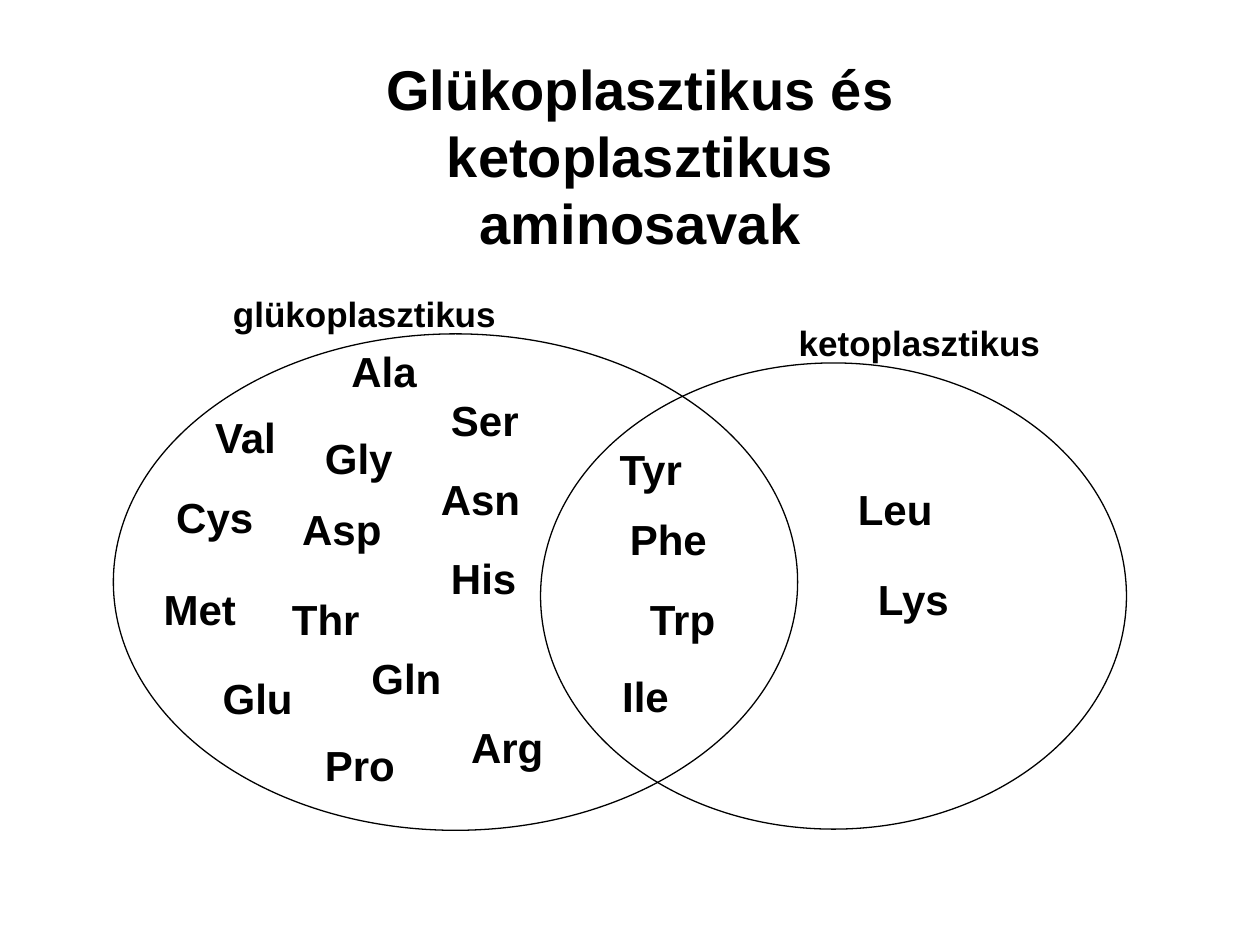
from typing import NamedTuple

from pptx import Presentation
from pptx.dml.color import RGBColor
from pptx.enum.shapes import MSO_SHAPE
from pptx.enum.text import MSO_ANCHOR, MSO_AUTO_SIZE, PP_ALIGN
from pptx.util import Pt

BLACK = RGBColor(0, 0, 0)
FONT = "Arial"
LINE_FACTOR = 1.2
TOP_INSET = 5
TITLE_SIDE_INSET = 20


class Label(NamedTuple):
    text: str
    left: float
    top: float
    width: float
    height: float = 36
    size: int = 24


class Oval(NamedTuple):
    left: float
    top: float
    width: float
    height: float


TITLE = Label("Glükoplasztikus és ketoplasztikus\naminosavak",
              99.4, 25.9, 532.8, 84.2, 32)

SETS = [
    Oval(64.8, 190.8, 391, 283.7),
    Oval(308.9, 207.4, 334.8, 266.4),
]

SET_NAMES = [
    Label("glükoplasztikus", 126, 162, 164.2, 31, 20),
    Label("ketoplasztikus", 449.3, 178.6, 151.9, 31, 20),
]

GLUCOGENIC = [
    Label("Ala", 193.7, 192.2, 51.8),
    Label("Ser", 250.6, 220.3, 53.3),
    Label("Val", 115.9, 230.4, 50.4),
    Label("Gly", 178.6, 241.9, 53.3),
    Label("Asn", 244.8, 265.7, 59.8),
    Label("Cys", 93.6, 275.8, 58.3),
    Label("Asp", 165.6, 283, 59.8),
    Label("His", 250.6, 311, 51.8),
    Label("Met", 86.4, 328.3, 56.2),
    Label("Thr", 159.8, 334.1, 53.3),
    Label("Gln", 205.2, 367.9, 54.7),
    Label("Glu", 120.2, 379.4, 54.7),
    Label("Arg", 262.1, 407.5, 56.2),
    Label("Pro", 178.6, 417.6, 54.7),
]

MIXED = [
    Label("Tyr", 347, 248.4, 51.8),
    Label("Phe", 352.8, 288.7, 58.3),
    Label("Trp", 364.3, 334.1, 53.3),
    Label("Ile", 348.5, 378, 41),
]

KETOGENIC = [
    Label("Leu", 483.1, 271.4, 56.9),
    Label("Lys", 494.6, 322.6, 56.2),
]


def write_text(frame, text: str, *, size: int, align=PP_ALIGN.LEFT,
               wrap: bool = False) -> None:
    frame.text = text
    frame.auto_size = MSO_AUTO_SIZE.NONE
    frame.word_wrap = wrap
    frame.vertical_anchor = MSO_ANCHOR.TOP
    frame.margin_top = Pt(TOP_INSET)
    for para in frame.paragraphs:
        para.alignment = align
        para.line_spacing = Pt(size * LINE_FACTOR)
        para.space_before = Pt(0)
        for span in para.runs:
            span.font.name = FONT
            span.font.size = Pt(size)
            span.font.bold = True
            span.font.color.rgb = BLACK


def draw_title(page, title: Label) -> None:
    box = page.shapes.title
    box.left, box.top = Pt(title.left), Pt(title.top)
    box.width, box.height = Pt(title.width), Pt(title.height)
    frame = box.text_frame
    frame.margin_left = frame.margin_right = Pt(TITLE_SIDE_INSET)
    write_text(frame, title.text, size=title.size,
               align=PP_ALIGN.CENTER, wrap=True)


def draw_oval(page, oval: Oval) -> None:
    shape = page.shapes.add_shape(MSO_SHAPE.OVAL, *map(Pt, oval))
    shape.shadow.inherit = False
    shape.fill.background()
    shape.line.color.rgb = BLACK
    shape.line.width = Pt(0.75)


def draw_label(page, label: Label) -> None:
    box = page.shapes.add_textbox(Pt(label.left), Pt(label.top),
                                  Pt(label.width), Pt(label.height))
    write_text(box.text_frame, label.text, size=label.size)


def main() -> None:
    deck = Presentation()
    deck.slide_width, deck.slide_height = Pt(720), Pt(540)
    page = deck.slides.add_slide(deck.slide_layouts.get_by_name("Title Only"))
    draw_title(page, TITLE)
    for oval in SETS:
        draw_oval(page, oval)
    for label in SET_NAMES + GLUCOGENIC + MIXED + KETOGENIC:
        draw_label(page, label)
    deck.save("out.pptx")


if __name__ == "__main__":
    main()
